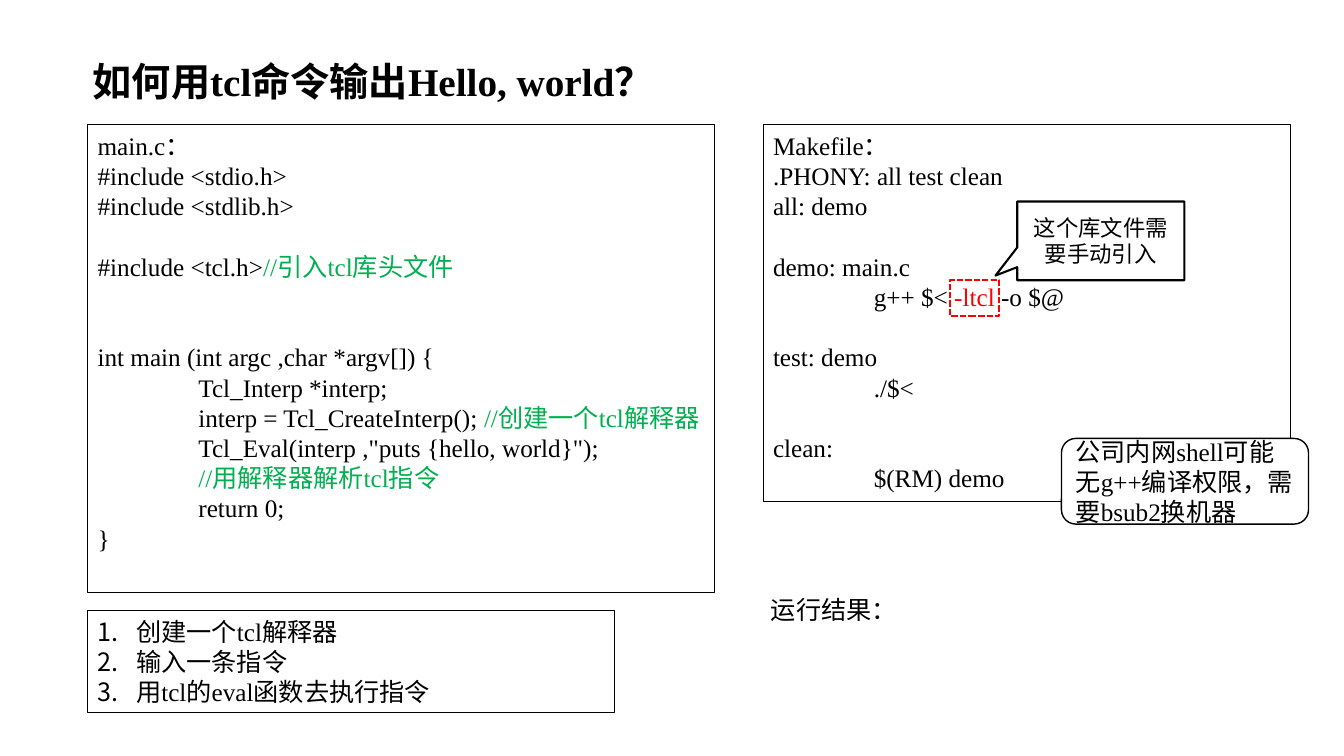
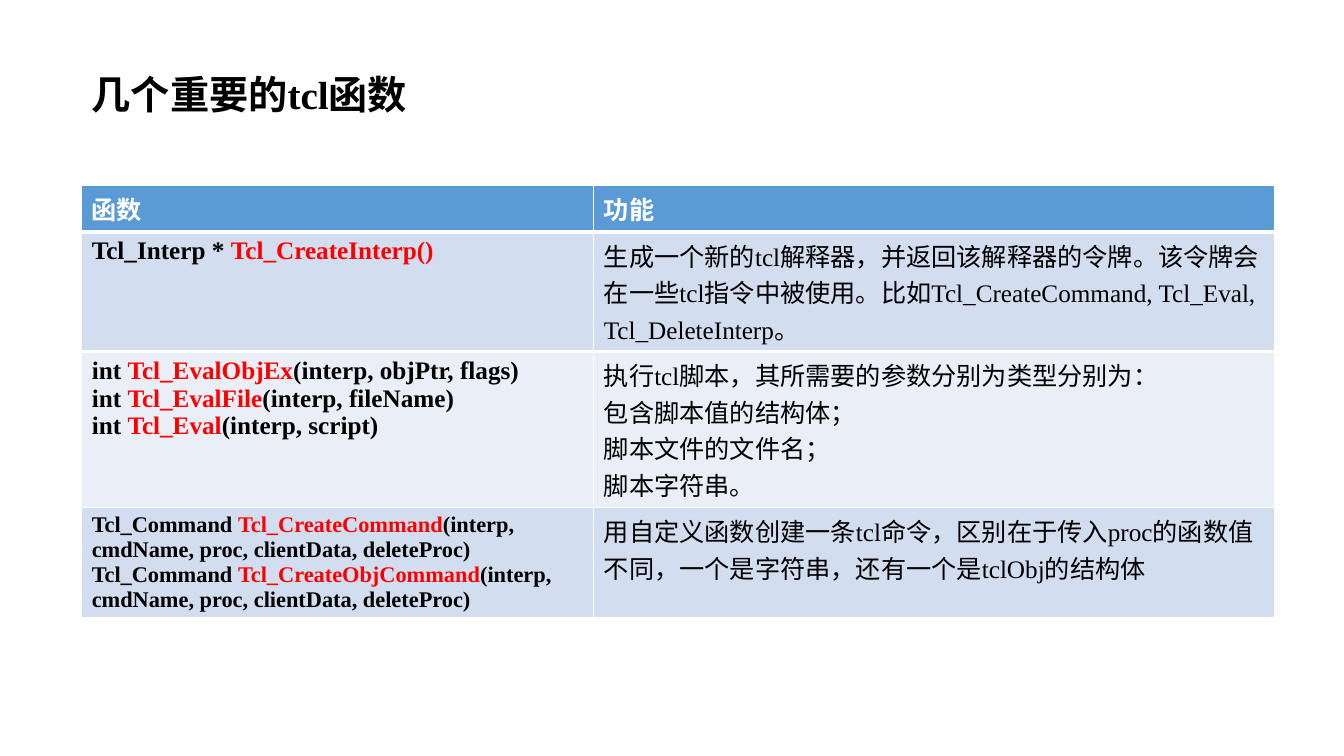
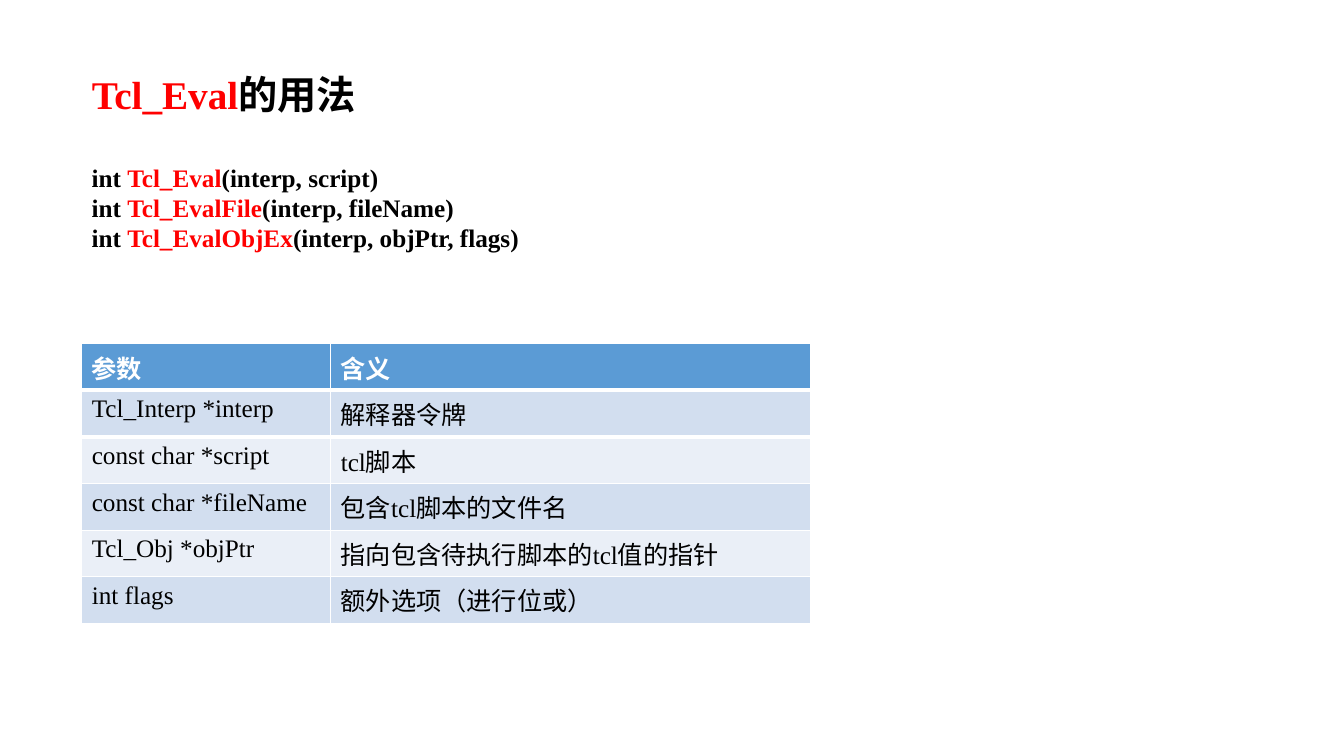
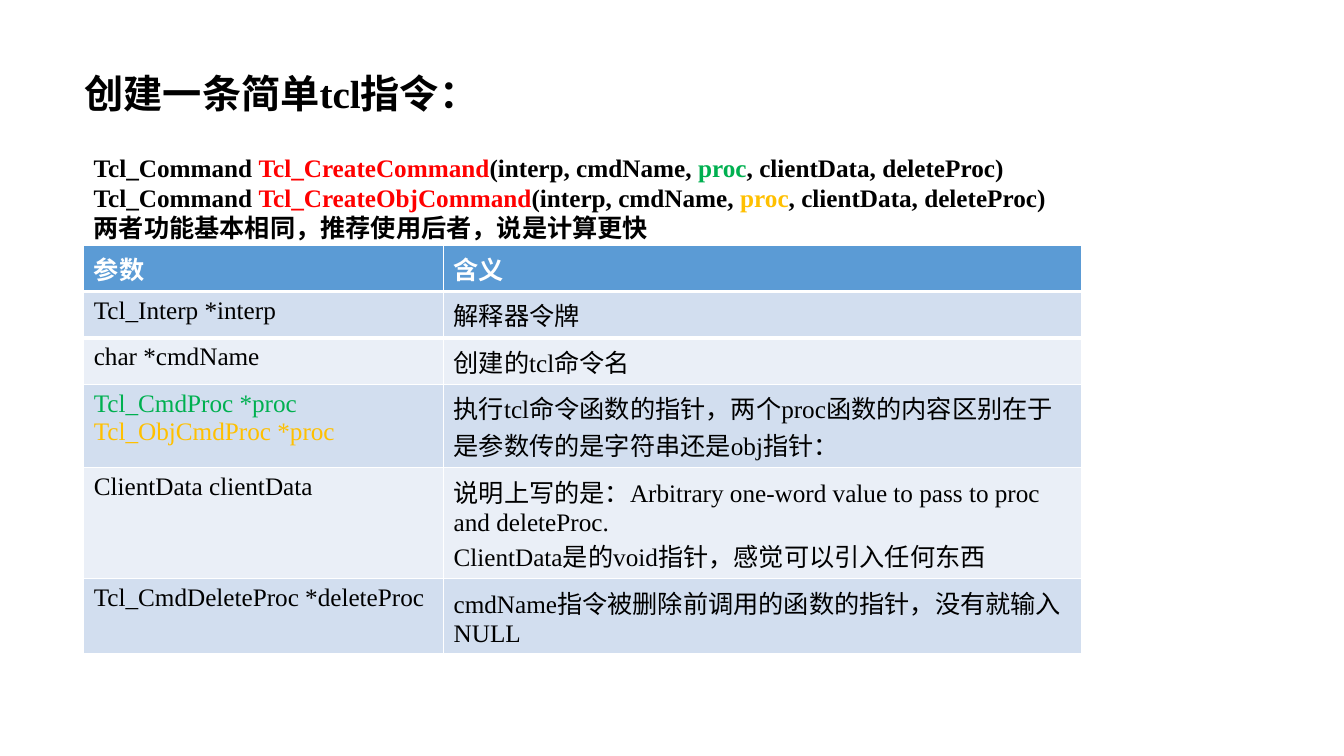
from lxml import etree
from pptx import Presentation, util as u
from pptx.dml.color import RGBColor
from pptx.enum import dml, shapes, text
from pptx.oxml.ns import qn

BLACK = RGBColor(0, 0, 0)
WHITE = RGBColor(255, 255, 255)
RED = RGBColor(255, 0, 0)
GREEN = RGBColor(0, 0xB0, 0x50)
GOLD = RGBColor(0xFF, 0xC0, 0)
BLUE = RGBColor(0x5B, 0x9B, 0xD5)
BANDS = RGBColor(0xD2, 0xDE, 0xEF), RGBColor(0xEA, 0xEF, 0xF7)
SERIF, SANS = "Times New Roman", "Noto Sans CJK SC"
LEAD = u.Pt(21.6)
PAGE = (0, 0, u.Inches(13.333), u.Inches(7.5))
LEFT, MID, TOP = text.PP_ALIGN.LEFT, text.MSO_ANCHOR.MIDDLE, text.MSO_ANCHOR.TOP

EVAL = ["int ", ("Tcl_Eval", RED), "(interp, script)"]
FILE = ["int ", ("Tcl_EvalFile", RED), "(interp, fileName)"]
OBJ = ["int ", ("Tcl_EvalObjEx", RED), "(interp, objPtr, flags)"]


def part(box, left, top, wide, high):
    """Return the area at the given percentages of a box."""
    x, y, w, h = box
    return (int(x + w * left / 100), int(y + h * top / 100),
            int(w * wide / 100), int(h * high / 100))


def put(frame, paras, anchor=TOP, wrap=True, **style):
    """Set up a shape's text frame and fill it."""
    frame.word_wrap = wrap
    frame.auto_size = text.MSO_AUTO_SIZE.NONE
    frame.vertical_anchor = anchor
    write(frame, paras, **style)


def write(frame, paras, size=18, bold=False, color=BLACK, font=SERIF,
          lead=None, align=LEFT):
    """Write paragraphs, each text or a list of pieces; None is a gap."""
    gap, first = 0, True
    for para in paras:
        if para is None:
            gap += LEAD
            continue
        line = frame.paragraphs[0] if first else frame.add_paragraph()
        first = False
        line.alignment = align
        line.space_before = u.Emu(gap)
        gap = 0
        if lead:
            line.line_spacing = lead
        for piece in [para] if isinstance(para, str) else para:
            words, tint = (piece, color) if isinstance(piece, str) else piece
            run = line.add_run()
            run.text = words
            run.font.size, run.font.bold = u.Pt(size), bold
            run.font.color.rgb = tint
            run.font.name = font
            etree.SubElement(run.font._element, qn("a:ea")).set("typeface", SANS)


def head(slide, area, words, lead=1.5):
    """Place and format the slide title."""
    title = slide.shapes.title
    title.left, title.top, title.width, title.height = area
    put(title.text_frame, [words], size=28, bold=True, lead=lead, anchor=MID)


def frame(slide, area, kind="RECTANGLE", line=BLACK, width=0.75, fill=None):
    """Draw an outlined shape."""
    shape = slide.shapes.add_shape(getattr(shapes.MSO_SHAPE, kind), *area)
    shape.shadow.inherit = False
    if fill is None:
        shape.fill.background()
    else:
        shape.fill.solid()
        shape.fill.fore_color.rgb = fill
    shape.line.color.rgb, shape.line.width = line, u.Pt(width)
    return shape


def code(slide, area, lines):
    """Draw a framed code listing with a one-inch tab stop."""
    body = frame(slide, area).text_frame
    put(body, lines, lead=LEAD)
    for line in body.paragraphs:
        stops = etree.SubElement(line._p.get_or_add_pPr(), qn("a:tabLst"))
        stop = etree.SubElement(stops, qn("a:tab"))
        stop.set("pos", str(u.Inches(1)))
        stop.set("algn", "l")


def label(slide, area, lines, **style):
    """Add a free text block."""
    block = slide.shapes.add_textbox(*area)
    put(block.text_frame, lines, lead=LEAD, **style)


def steps(slide, area, lines):
    """Turn the body placeholder into a framed numbered list."""
    body = slide.placeholders[1]
    body.left, body.top, body.width, body.height = area
    body.line.color.rgb, body.line.width = BLACK, u.Pt(0.75)
    put(body.text_frame, lines, lead=LEAD)
    for line in body.text_frame.paragraphs:
        props = line._p.get_or_add_pPr()
        props.set("marL", str(u.Inches(0.38)))
        props.set("indent", str(-u.Inches(0.38)))
        etree.SubElement(props, qn("a:buFont")).set("typeface", SANS)
        etree.SubElement(props, qn("a:buAutoNum")).set("type", "arabicPeriod")


def make(slide, area):
    """Draw the Makefile with its marked library flag and callout."""
    code(slide, area, [
        "Makefile：", ".PHONY: all test clean", "all: demo", None,
        "demo: main.c", ["\tg++ $< ", ("-ltcl ", RED), "-o $@"], None,
        "test: demo", "\t./$<", None, "clean:", "\t$(RM) demo"])
    flag = frame(slide, part(area, 35.4, 41.2, 9.4, 9.4), line=RED, width=1.5)
    flag.line.dash_style = dml.MSO_LINE.SQUARE_DOT
    hint = frame(slide, part(area, 48.2, 20.3, 31.7, 20.9),
                 "RECTANGULAR_CALLOUT", width=1.5)
    hint.adjustments[0], hint.adjustments[1] = -0.63, 0.44
    put(hint.text_frame, ["这个库文件需要手动引入"], size=16, font=SANS,
        lead=u.Pt(18.6), align=text.PP_ALIGN.CENTER, anchor=MID)


def rule(cell, side, width):
    """Draw a white border on one side of a cell."""
    edge = etree.Element(qn("a:" + side))
    edge.set("w", str(u.Pt(width)))
    fill = etree.SubElement(edge, qn("a:solidFill"))
    etree.SubElement(fill, qn("a:srgbClr")).set("val", str(WHITE))
    cell._tc.get_or_add_tcPr().insert(0, edge)


def grid(slide, area, cols, rows, style=None):
    """Draw a banded table; style formats the first cell of a row by its index."""
    table = slide.shapes.add_table(len(rows), len(cols), *area).table
    for col, share in zip(table.columns, cols):
        col.width = int(area[2] * share / sum(cols))
    for r, row in enumerate(rows):
        table.rows[r].height = u.Inches(0.41)
        for c, paras in enumerate(row):
            cell = table.cell(r, c)
            cell.fill.solid()
            cell.fill.fore_color.rgb = BANDS[(r - 1) % 2] if r else BLUE
            if r < 2:
                rule(cell, "lnT" if r else "lnB", 3)
            look = {} if r else {"bold": True, "color": WHITE}
            if r and c == 0 and style:
                look = style(r)
            write(cell.text_frame, [paras] if isinstance(paras, str) else paras,
                  **look)


def hello(slide):
    """Build the hello world slide."""
    head(slide, part(PAGE, 6.15, 2.67, 86.25, 12.93),
         "如何用tcl命令输出Hello, world？")
    code(slide, part(PAGE, 6.53, 16.53, 46.65, 61.87), [
        "main.c：", "#include <stdio.h>", "#include <stdlib.h>", None,
        ["#include <tcl.h>", ("//引入tcl库头文件", GREEN)], None, None,
        "int main (int argc ,char *argv[]) {", "\tTcl_Interp *interp;",
        ["\tinterp = Tcl_CreateInterp(); ", ("//创建一个tcl解释器", GREEN)],
        "\tTcl_Eval(interp ,\"puts {hello, world}\");",
        [("\t//用解释器解析tcl指令", GREEN)], "\treturn 0;", "}"])
    steps(slide, part(PAGE, 6.53, 80.8, 39.23, 13.47),
          ["创建一个tcl解释器", "输入一条指令", "用tcl的eval函数去执行指令"])
    make(slide, part(PAGE, 56.78, 16.53, 39.23, 49.87))
    label(slide, part(PAGE, 56.63, 78, 10.95, 5.33), ["运行结果："], wrap=False)
    note = frame(slide, part(PAGE, 78.98, 58, 18.38, 11.33),
                 "ROUNDED_RECTANGLE", width=1, fill=WHITE)
    put(note.text_frame, ["公司内网shell可能无g++编译权限，需要bsub2换机器"],
        lead=LEAD, anchor=MID)


def funcs(slide):
    """Build the slide of important functions."""
    head(slide, part(PAGE, 6.08, 4.4, 86.25, 12.93), "几个重要的tcl函数")
    made = [["Tcl_Command ", (name, RED),
             "(interp, cmdName, proc, clientData, deleteProc)"]
            for name in ("Tcl_CreateCommand", "Tcl_CreateObjCommand")]
    grid(slide, part(PAGE, 6.08, 24.53, 88.73, 21.87), (5.08, 6.75), [
        ("函数", "功能"),
        ([["Tcl_Interp * ", ("Tcl_CreateInterp()", RED)]],
         "生成一个新的tcl解释器，并返回该解释器的令牌。该令牌会在一些tcl指令中被使用。"
         "比如Tcl_CreateCommand, Tcl_Eval, Tcl_DeleteInterp。"),
        ([OBJ, FILE, EVAL],
         ["执行tcl脚本，其所需要的参数分别为类型分别为：", "包含脚本值的结构体；",
          "脚本文件的文件名；", "脚本字符串。"]),
        (made, "用自定义函数创建一条tcl命令，区别在于传入proc的函数值不同，"
               "一个是字符串，还有一个是tclObj的结构体"),
    ], lambda r: {"bold": True, "size": 16 if r == 3 else 18})


def usage(slide):
    """Build the slide on the use of Tcl_Eval."""
    head(slide, part(PAGE, 6.08, 4.4, 86.25, 12.93),
         [("Tcl_Eval", RED), "的用法"])
    grid(slide, part(PAGE, 6.08, 45.47, 54.23, 32.8), (2.47, 4.76), [
        ("参数", "含义"),
        ("Tcl_Interp *interp", "解释器令牌"),
        ("const char *script", "tcl脚本"),
        ("const char *fileName", "包含tcl脚本的文件名"),
        ("Tcl_Obj *objPtr", "指向包含待执行脚本的tcl值的指针"),
        ("int flags", "额外选项（进行位或）")])
    label(slide, part(PAGE, 6.08, 20.8, 50, 13.47), [EVAL, FILE, OBJ], bold=True)


def create(slide):
    """Build the slide on creating a command."""
    head(slide, part(PAGE, 5.55, 6, 86.25, 13.47), "创建一条简单tcl指令：", 0.9)
    grid(slide, part(PAGE, 6.23, 32.4, 74.25, 32.8), (3.57, 6.33), [
        ("参数", "含义"),
        ("Tcl_Interp *interp", "解释器令牌"),
        ("char *cmdName", "创建的tcl命令名"),
        ([[("Tcl_CmdProc *proc", GREEN)], [("Tcl_ObjCmdProc *proc", GOLD)]],
         "执行tcl命令函数的指针，两个proc函数的内容区别在于是参数传的是字符串还是obj指针："),
        ("ClientData clientData",
         ["说明上写的是：Arbitrary one-word value to pass to proc and deleteProc.",
          "ClientData是的void指针，感觉可以引入任何东西"]),
        ("Tcl_CmdDeleteProc *deleteProc",
         "cmdName指令被删除前调用的函数的指针，没有就输入NULL")])
    calls = [["Tcl_Command ", (name, RED), "(interp, cmdName, ", ("proc", tint),
              ", clientData, deleteProc)"]
             for name, tint in (("Tcl_CreateCommand", GREEN),
                                ("Tcl_CreateObjCommand", GOLD))]
    label(slide, part(PAGE, 6.23, 19.47, 83.63, 13.47),
          calls + ["两者功能基本相同，推荐使用后者，说是计算更快"], bold=True)


def main():
    """Build and save the deck."""
    deck = Presentation()
    deck.slide_width, deck.slide_height = PAGE[2:]
    for build, layout in ((hello, 1), (funcs, 5), (usage, 5), (create, 5)):
        build(deck.slides.add_slide(deck.slide_layouts[layout]))
    deck.save("out.pptx")


if __name__ == "__main__":
    main()
